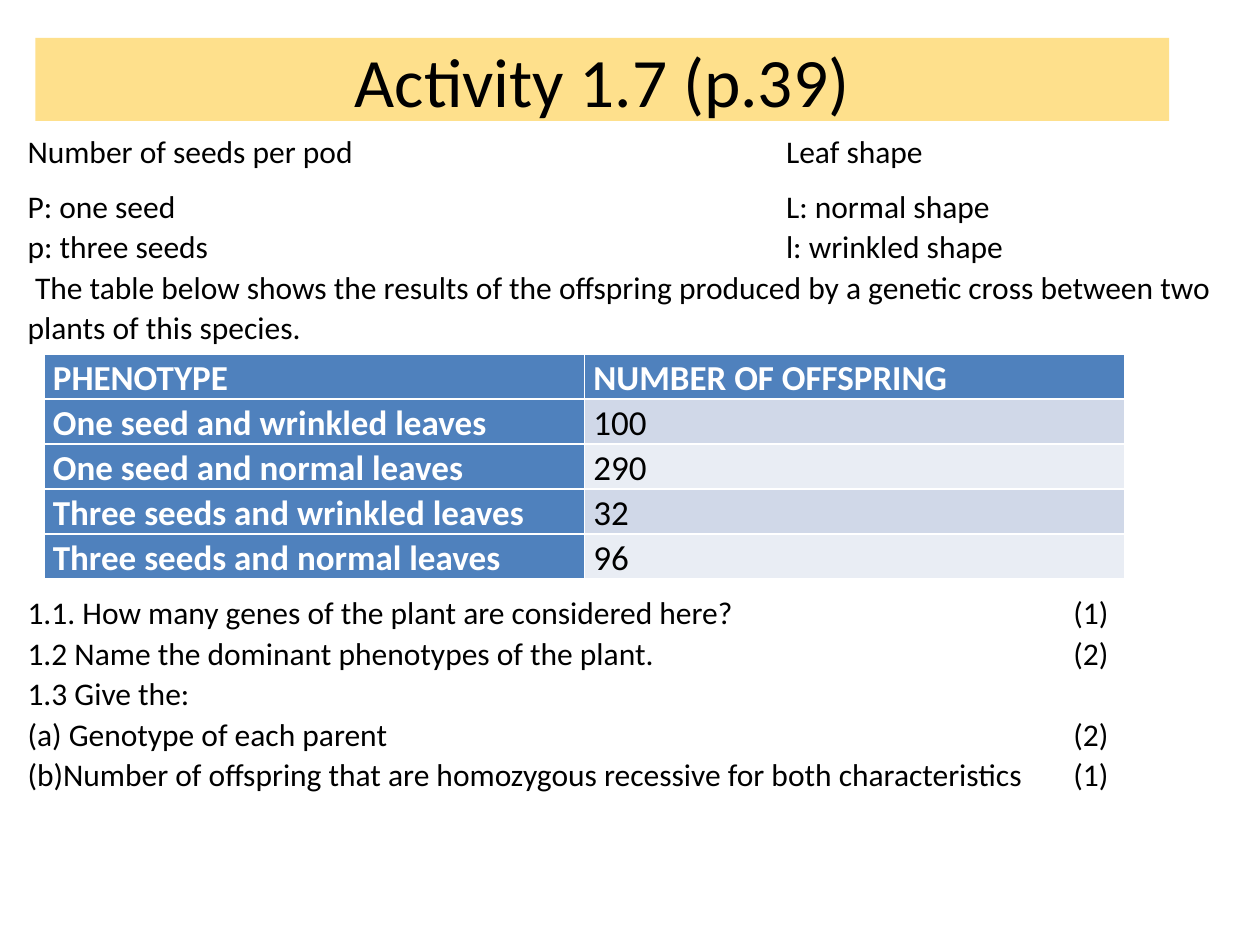
import pptx
import pptx.util
import pptx.dml.color
import pptx.enum.text
import pptx.oxml.ns
from lxml import etree

Inches, Pt = pptx.util.Inches, pptx.util.Pt
RGBColor = pptx.dml.color.RGBColor
ANCHOR = pptx.enum.text.MSO_ANCHOR
ALIGN = pptx.enum.text.PP_ALIGN

BLACK = RGBColor(0x00, 0x00, 0x00)
WHITE = RGBColor(0xFF, 0xFF, 0xFF)
YELLOW = RGBColor(0xFE, 0xE0, 0x8C)
BLUE = RGBColor(0x4F, 0x81, 0xBD)
BANDS = (RGBColor(0xE9, 0xED, 0xF4), RGBColor(0xD0, 0xD8, 0xE8))
FONT = "Calibri"
LINE_SPACING = 1.07

TITLE = "Activity 1.7 (p.39)"

# Each line: text, space after in points, first-line indent in inches
INTRO = [
    ("Number of seeds per pod\tLeaf shape", 8, 0),
    ("P: one seed\tL: normal shape", 0, 0),
    ("p: three seeds\tl: wrinkled shape", 0, 0),
    ("The table below shows the results of the offspring produced by a "
     "genetic cross between two plants of this species.", 0, 0.06),
]
QUESTIONS = [
    ("1.1. How many genes of the plant are considered here?\t(1)", 0, 0),
    ("1.2 Name the dominant phenotypes of the plant.\t(2)", 0, 0),
    ("1.3 Give the:", 0, 0),
    ("(a) Genotype of each parent\t(2)", 0, 0),
    ("(b)Number of offspring that are homozygous recessive for both "
     "characteristics\t(1)", 0, 0),
]
RESULTS = [
    ("PHENOTYPE", "NUMBER OF OFFSPRING"),
    ("One seed and wrinkled leaves", "100"),
    ("One seed and normal leaves", "290"),
    ("Three seeds and wrinkled leaves", "32"),
    ("Three seeds and normal leaves", "96"),
]


def write(p, text, size=18, color=BLACK, bold=False, align=ALIGN.LEFT,
          spacing=LINE_SPACING, after=0, indent=0, tab=None):
    p.alignment = align
    p.line_spacing = spacing
    p.space_before, p.space_after = Pt(0), Pt(after)
    pPr = p._p.get_or_add_pPr()
    if indent:
        pPr.set("indent", str(Inches(indent)))
    if tab:
        tabs = etree.SubElement(pPr, pptx.oxml.ns.qn("a:tabLst"))
        etree.SubElement(tabs, pptx.oxml.ns.qn("a:tab"),
                         pos=str(Inches(tab)), algn="l")
    r = p.add_run()
    r.text = text
    r.font.name, r.font.size, r.font.bold = FONT, Pt(size), bold
    r.font.color.rgb = color


def add_lines(slide, lines, top, height, tab):
    sp = slide.shapes.add_textbox(Inches(0.12), Inches(top),
                                  Inches(9.88), Inches(height))
    tf = sp.text_frame
    tf.word_wrap = True
    for i, (text, after, indent) in enumerate(lines):
        p = tf.add_paragraph() if i else tf.paragraphs[0]
        write(p, text, after=after, indent=indent,
              tab=tab if "\t" in text else None)


def add_title(slide):
    sp = slide.shapes.title
    sp.left, sp.top, sp.width, sp.height = map(Inches, (0.28, 0.3, 9, 0.66))
    sp.fill.solid()
    sp.fill.fore_color.rgb = YELLOW
    tf = sp.text_frame
    tf.auto_size = pptx.enum.text.MSO_AUTO_SIZE.NONE
    tf.vertical_anchor = ANCHOR.MIDDLE
    write(tf.paragraphs[0], TITLE, size=39.6, align=ALIGN.CENTER, spacing=1.0)


def add_results(slide):
    rows, cols = len(RESULTS), len(RESULTS[0])
    table = slide.shapes.add_table(rows, cols, Inches(0.35), Inches(2.81),
                                   Inches(8.58), Inches(1.78)).table
    table.first_col = True
    for r, row in enumerate(RESULTS):
        for c, text in enumerate(row):
            cell = table.cell(r, c)
            heading = r == 0 or c == 0
            cell.margin_left = cell.margin_right = Inches(0.07)
            cell.margin_top = cell.margin_bottom = 0
            cell.fill.solid()
            cell.fill.fore_color.rgb = BLUE if heading else BANDS[r % 2]
            write(cell.text_frame.paragraphs[0], text, size=20, bold=heading,
                  color=WHITE if heading else BLACK)


def main():
    prs = pptx.Presentation()
    prs.slide_width, prs.slide_height = Inches(10), Inches(7.5)
    slide = prs.slides.add_slide(prs.slide_layouts.get_by_name("Title Only"))
    add_title(slide)
    add_lines(slide, INTRO, top=0.98, height=1.83, tab=6.02)
    add_results(slide)
    add_lines(slide, QUESTIONS, top=4.64, height=2.19, tab=8.3)
    prs.save("out.pptx")


if __name__ == "__main__":
    main()
